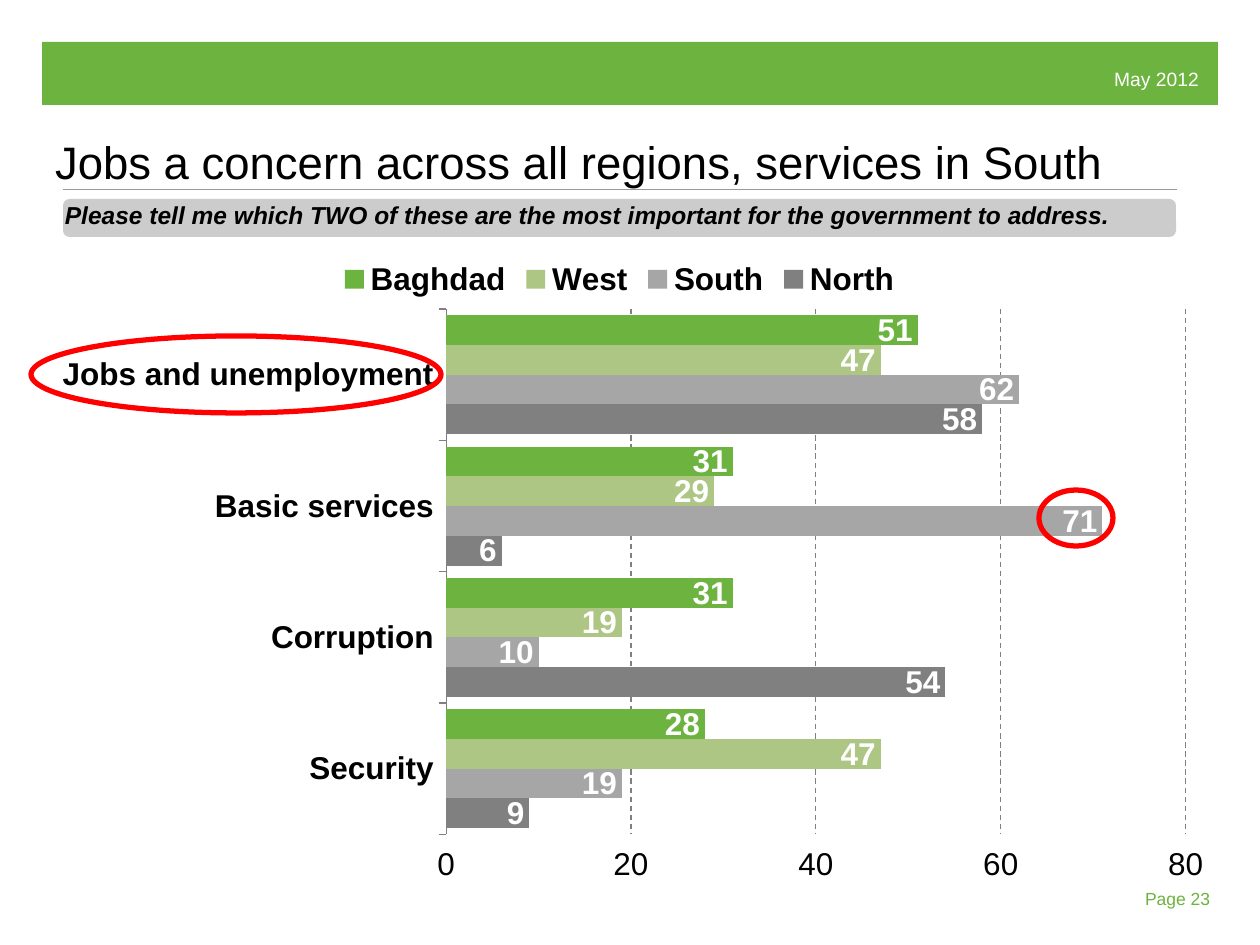
"""Build a slide with a clustered bar chart of regional concerns."""
from lxml import etree
from pptx import Presentation
from pptx.chart.data import CategoryChartData
from pptx.dml.color import RGBColor
from pptx.enum.chart import XL_CHART_TYPE, XL_LABEL_POSITION, XL_LEGEND_POSITION, XL_TICK_MARK
from pptx.enum.dml import MSO_LINE
from pptx.enum.shapes import MSO_CONNECTOR, MSO_SHAPE
from pptx.enum.text import MSO_ANCHOR, PP_ALIGN
from pptx.oxml import parse_xml
from pptx.oxml.ns import qn
from pptx.util import Pt

BAR = XL_CHART_TYPE.BAR_CLUSTERED
END = XL_LABEL_POSITION.INSIDE_END
TOP = XL_LEGEND_POSITION.TOP
OUT, NONE = XL_TICK_MARK.OUTSIDE, XL_TICK_MARK.NONE
DASH, DOT = MSO_LINE.DASH, MSO_LINE.ROUND_DOT
RECT, ROUND, OVAL = MSO_SHAPE.RECTANGLE, MSO_SHAPE.ROUNDED_RECTANGLE, MSO_SHAPE.OVAL
HIGH, MID, LOW = MSO_ANCHOR.TOP, MSO_ANCHOR.MIDDLE, MSO_ANCHOR.BOTTOM
LEFT, RIGHT = PP_ALIGN.LEFT, PP_ALIGN.RIGHT
SCALE = 914400 / 126
GREEN, GRAY, RED = "6DB33F", "808080", "FF0000"


def color(code):
    return RGBColor.from_string(code)


def write(shape, text, size, code, pad, anchor, align, wrap=True, **style):
    frame = shape.text_frame
    form = {"margin_left": px(pad), "margin_right": px(pad), "margin_top": 0,
            "margin_bottom": 0, "word_wrap": wrap, "vertical_anchor": anchor}
    for key, val in form.items():
        setattr(frame, key, val)
    para = frame.paragraphs[0]
    para.alignment = align
    run = para.add_run()
    run.text = text
    for key, val in {"name": "Arial", "size": Pt(size), **style}.items():
        setattr(run.font, key, val)
    run.font.color.rgb = color(code)
    return para


px = lambda num: round(num * SCALE)
deck = Presentation()
deck.slide_width, deck.slide_height = px(1260), px(945)
slide = deck.slides.add_slide(deck.slide_layouts[6])
shapes = slide.shapes

band = shapes.add_shape(RECT, *map(px, (42, 42, 1176, 63)))
band.shadow.inherit = False
band.fill.solid()
band.fill.fore_color.rgb = color(GREEN)
band.line.fill.background()

date = shapes.add_textbox(*map(px, (1101, 67, 111, 24)))
write(date, "May 2012", 11, "FFFFFF", 13, HIGH, RIGHT, False)

rule = shapes.add_connector(MSO_CONNECTOR.STRAIGHT, *map(px, (63, 189, 1176, 189)))
rule.line.color.rgb = color("999999")
rule.line.width = Pt(0.25)
rule.line.dash_style = DOT
etree.SubElement(rule._element.spPr, qn("a:effectLst"))

data = CategoryChartData(number_format="0")
data.categories = ["Security", "Corruption", "Basic services", "Jobs and unemployment"]
series = [
    ("North", (9, 54, 6, 58), GRAY),
    ("South", (19, 10, 71, 62), "A6A6A6"),
    ("West", (47, 19, 29, 47), "ADC684"),
    ("Baghdad", (28, 31, 31, 51), GREEN),
]
for name, vals, code in series:
    data.add_series(name, vals)
chart = shapes.add_chart(BAR, *map(px, (26, 246, 1187, 644)), data).chart
chart.has_title = False
chart.font.name = "Arial"
chart.font.size = Pt(18)
chart.font.color.rgb = color("000000")
chart.has_legend = True
for key, val in {"position": TOP, "include_in_layout": False}.items():
    setattr(chart.legend, key, val)
chart.legend.font.bold = True

plot = chart.plots[0]
for key, val in {"gap_width": 42, "overlap": 0, "vary_by_categories": False}.items():
    setattr(plot, key, val)
for bars, (name, vals, code) in zip(plot.series, series):
    bars.invert_if_negative = False
    bars.format.fill.solid()
    bars.format.fill.fore_color.rgb = color(code)
    tags = bars.data_labels
    for key, val in {"show_value": True, "position": END}.items():
        setattr(tags, key, val)
    for key, val in {"name": "Arial", "size": Pt(18), "bold": True}.items():
        setattr(tags.font, key, val)
    tags.font.color.rgb = color("FFFFFF")

cats, axis = chart.category_axis, chart.value_axis
cats.major_tick_mark, cats.minor_tick_mark = OUT, NONE
cats.tick_labels.font.bold = True
cats.format.line.color.rgb = color(GRAY)
form = {"minimum_scale": 0, "maximum_scale": 80, "major_unit": 20,
        "major_tick_mark": OUT, "minor_tick_mark": NONE, "has_major_gridlines": True}
for key, val in form.items():
    setattr(axis, key, val)
axis.format.line.fill.background()
grid = axis.major_gridlines.format.line
grid.color.rgb = color(GRAY)
grid.width = Pt(0.75)
grid.dash_style = DASH

area = chart._chartSpace.chart.plotArea
for old in area.findall(qn("c:layout")):
    area.remove(old)
spots = {"xMode": "edge", "yMode": "edge", "x": 0.354, "y": 0.098, "w": 0.623, "h": 0.816}
parts = "".join(f'<c:{key} val="{val}"/>' for key, val in spots.items())
space = "http://schemas.openxmlformats.org/drawingml/2006/chart"
area.insert(0, parse_xml(
    f'<c:layout xmlns:c="{space}"><c:manualLayout><c:layoutTarget val="inner"/>'
    f'{parts}</c:manualLayout></c:layout>'))

title = shapes.add_textbox(*map(px, (42, 126, 1176, 63)))
write(title, "Jobs a concern across all regions, services in South", 26, "000000", 13, LOW, LEFT)

query = shapes.add_shape(ROUND, *map(px, (63, 199, 1113, 38)))
query.shadow.inherit = False
query.adjustments[0] = 0.17
query.fill.solid()
query.fill.fore_color.rgb = color("CCCCCC")
query.line.fill.background()
para = write(query, "Please tell me which TWO of these are the most important for the government to address.",
             14, "000000", 0, MID, LEFT, bold=True, italic=True)
para.line_spacing = 0.75

page = shapes.add_textbox(*map(px, (1145, 882, 72, 32)))
write(page, "Page 23", 10, GREEN, 0, MID, LEFT)

for box in ((1039, 490, 74, 56), (31, 336, 410, 77)):
    ring = shapes.add_shape(OVAL, *map(px, box))
    ring.shadow.inherit = False
    ring.fill.background()
    ring.line.color.rgb = color(RED)
    ring.line.width = Pt(3)

deck.save("out.pptx")
